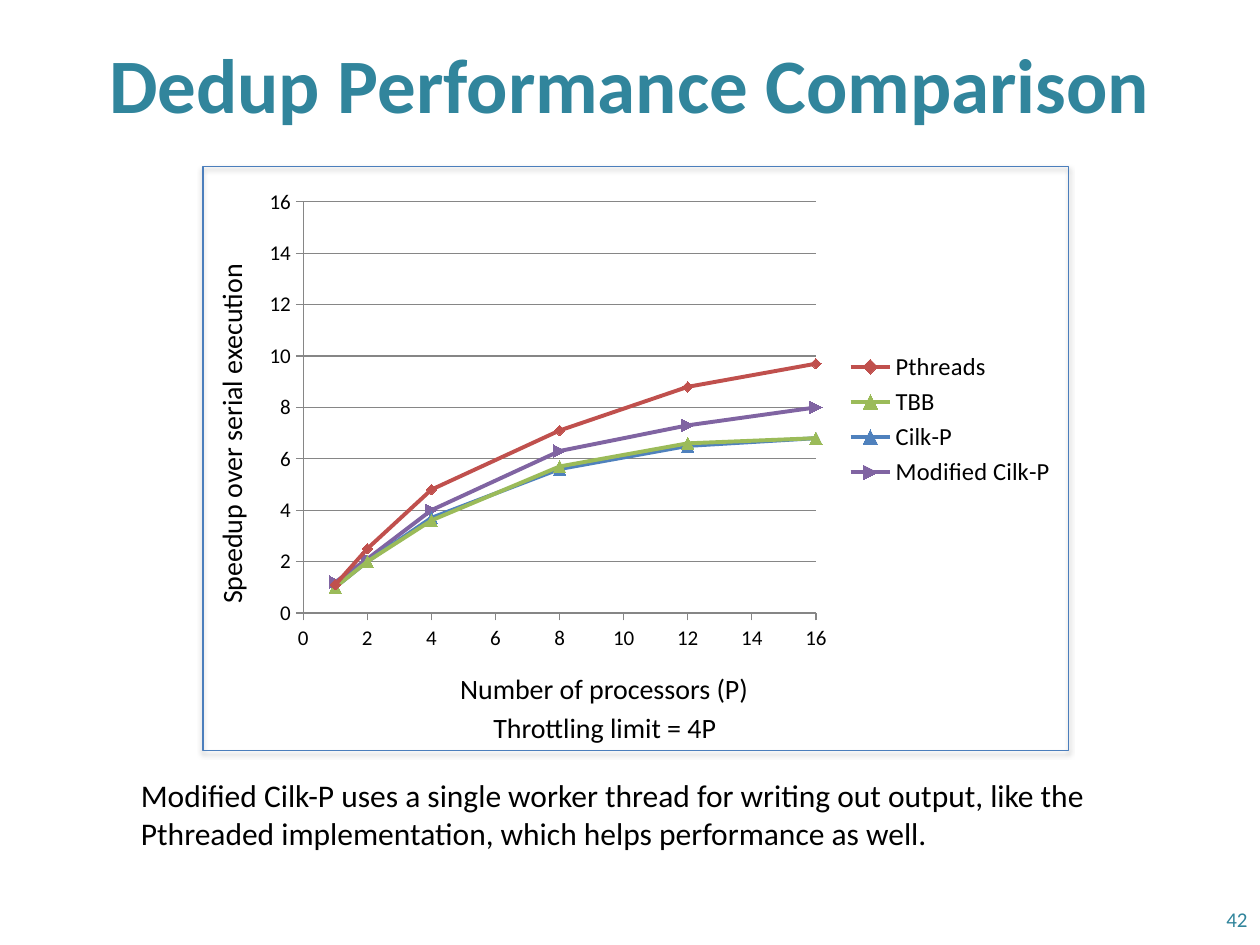
from dataclasses import dataclass

import lxml.etree
import pptx
import pptx.chart.data
import pptx.dml.color
import pptx.enum.chart
import pptx.enum.shapes
import pptx.enum.text
import pptx.oxml
import pptx.oxml.ns
import pptx.util

Pt = pptx.util.Pt
RGBColor = pptx.dml.color.RGBColor
Align = pptx.enum.text.PP_ALIGN
Anchor = pptx.enum.text.MSO_ANCHOR
Marker = pptx.enum.chart.XL_MARKER_STYLE

FONT = "Calibri"
BLACK = RGBColor(0x00, 0x00, 0x00)
TEAL = RGBColor(0x31, 0x85, 0x9C)
FRAME_BLUE = RGBColor(0x4B, 0x7E, 0xBC)
AXIS_GRAY = RGBColor(0x86, 0x86, 0x86)
RED = RGBColor(0xC0, 0x50, 0x4D)
GREEN = RGBColor(0x9B, 0xBB, 0x59)
BLUE = RGBColor(0x4F, 0x81, 0xBD)
PURPLE = RGBColor(0x80, 0x64, 0xA2)

PROCESSORS = (1, 2, 4, 8, 12, 16)


@dataclass(frozen=True)
class Box:
    left: float
    top: float
    width: float
    height: float

    def lengths(self) -> tuple:
        return Pt(self.left), Pt(self.top), Pt(self.width), Pt(self.height)


@dataclass(frozen=True)
class Speedup:
    name: str
    values: tuple
    color: RGBColor
    marker: Marker
    marker_size: int = 7


SPEEDUPS = (
    Speedup("Pthreads", (1.1, 2.5, 4.8, 7.1, 8.8, 9.7), RED, Marker.DIAMOND, 6),
    Speedup("TBB", (1, 2, 3.6, 5.7, 6.6, 6.8), GREEN, Marker.TRIANGLE),
    Speedup("Cilk-P", (1, 2, 3.7, 5.6, 6.5, 6.8), BLUE, Marker.TRIANGLE),
    Speedup("Modified Cilk-P", (1.2, 2.1, 4, 6.3, 7.3, 8), PURPLE, Marker.DOT),
)


def add_text(slide, text: str, box: Box, *, size: float = 16,
             color: RGBColor = BLACK, bold: bool = False,
             align: Align = Align.CENTER, anchor: Anchor = Anchor.TOP,
             rotation: float = 0, wrap: bool = True) -> None:
    label = slide.shapes.add_textbox(*box.lengths())
    label.rotation = rotation
    frame = label.text_frame
    frame.word_wrap = wrap
    frame.vertical_anchor = anchor
    paragraph = frame.paragraphs[0]
    paragraph.alignment = align
    run = paragraph.add_run()
    run.text = text
    style_font(run.font, size, color, bold)


def style_font(font, size: float, color: RGBColor = BLACK, bold: bool = False) -> None:
    font.name = FONT
    font.size = Pt(size)
    font.bold = bold
    font.color.rgb = color


def add_frame(slide, box: Box) -> None:
    frame = slide.shapes.add_shape(
        pptx.enum.shapes.MSO_SHAPE.RECTANGLE, *box.lengths())
    frame.fill.background()
    frame.line.color.rgb = FRAME_BLUE
    frame.line.width = Pt(0.75)
    frame.shadow.inherit = False
    effects = frame.element.spPr.find(pptx.oxml.ns.qn("a:effectLst"))
    effects.append(pptx.oxml.parse_xml(
        f'<a:outerShdw {pptx.oxml.ns.nsdecls("a")} blurRad="{Pt(3.1)}" '
        f'dist="{Pt(1.8)}" dir="5400000" rotWithShape="0">'
        '<a:srgbClr val="000000"><a:alpha val="35000"/></a:srgbClr>'
        '</a:outerShdw>'))


def style_axis(axis, number_format: str) -> None:
    axis.minimum_scale = 0
    axis.maximum_scale = 16
    axis.major_unit = 2
    axis.major_tick_mark = pptx.enum.chart.XL_TICK_MARK.OUTSIDE
    axis.minor_tick_mark = pptx.enum.chart.XL_TICK_MARK.NONE
    axis.tick_labels.number_format = number_format
    axis.tick_labels.number_format_is_linked = False
    style_font(axis.tick_labels.font, 12)
    axis.format.line.color.rgb = AXIS_GRAY
    axis.format.line.width = Pt(0.75)


def place_plot(chart, **fractions: float) -> None:
    qn = pptx.oxml.ns.qn
    plot_area = chart.element.find(f".//{qn('c:plotArea')}")
    layout = plot_area.find(qn("c:layout"))
    if layout is None:
        layout = lxml.etree.Element(qn("c:layout"))
        plot_area.insert(0, layout)
    manual = lxml.etree.SubElement(layout, qn("c:manualLayout"))
    settings = {"layoutTarget": "inner", "xMode": "edge", "yMode": "edge", **fractions}
    for key, value in settings.items():
        lxml.etree.SubElement(manual, qn(f"c:{key}")).set("val", str(value))


def add_speedup_chart(slide, box: Box) -> None:
    measurements = pptx.chart.data.XyChartData()
    for speedup in SPEEDUPS:
        points = measurements.add_series(speedup.name)
        for processors, value in zip(PROCESSORS, speedup.values):
            points.add_data_point(processors, value)
    chart = slide.shapes.add_chart(
        pptx.enum.chart.XL_CHART_TYPE.XY_SCATTER_LINES,
        *box.lengths(), measurements).chart
    style_font(chart.font, 10)
    chart.has_title = False
    chart.has_legend = True
    chart.legend.position = pptx.enum.chart.XL_LEGEND_POSITION.RIGHT
    chart.legend.include_in_layout = False
    style_font(chart.legend.font, 14)
    style_axis(chart.category_axis, "General")
    style_axis(chart.value_axis, "0")
    chart.category_axis.has_major_gridlines = False
    chart.value_axis.has_major_gridlines = True
    gridline = chart.value_axis.major_gridlines.format.line
    gridline.color.rgb = AXIS_GRAY
    gridline.width = Pt(0.75)
    place_plot(chart, x=0.06, y=0.05, w=0.63, h=0.85)
    chart.plots[0].vary_by_categories = False
    for curve, speedup in zip(chart.plots[0].series, SPEEDUPS):
        curve.smooth = False
        curve.format.line.color.rgb = speedup.color
        curve.format.line.width = Pt(2.25)
        curve.marker.style = speedup.marker
        curve.marker.size = speedup.marker_size
        curve.marker.format.fill.solid()
        curve.marker.format.fill.fore_color.rgb = speedup.color
        curve.marker.format.line.color.rgb = speedup.color


def main() -> None:
    deck = pptx.Presentation()
    deck.slide_width, deck.slide_height = Pt(720), Pt(540)
    slide = deck.slides.add_slide(deck.slide_layouts[6])
    add_text(slide, "Dedup Performance Comparison", Box(36, 2, 648, 90),
             size=44, color=TEAL, bold=True, anchor=Anchor.MIDDLE)
    add_text(slide, "42", Box(552, 510.5, 168, 29), size=12, color=TEAL,
             align=Align.RIGHT, anchor=Anchor.MIDDLE)
    add_text(slide, "Throttling limit = 4P", Box(273.6, 402.5, 144, 26.6), wrap=False)
    add_text(slide, "Number of processors (P)", Box(240.5, 380.2, 209.5, 26.6))
    add_text(slide, "Speedup over serial execution",
             Box(-14.4, 234.7, 293, 26.6), rotation=270)
    add_frame(slide, Box(116, 95, 494.6, 334))
    add_text(slide, "Modified Cilk-P uses a single worker thread for writing out "
             "output, like the Pthreaded implementation, which helps performance "
             "as well.", Box(73.4, 440, 589.7, 51), size=18, align=Align.LEFT)
    add_speedup_chart(slide, Box(145.4, 101.5, 465.1, 276.5))
    deck.save("out.pptx")


if __name__ == "__main__":
    main()
